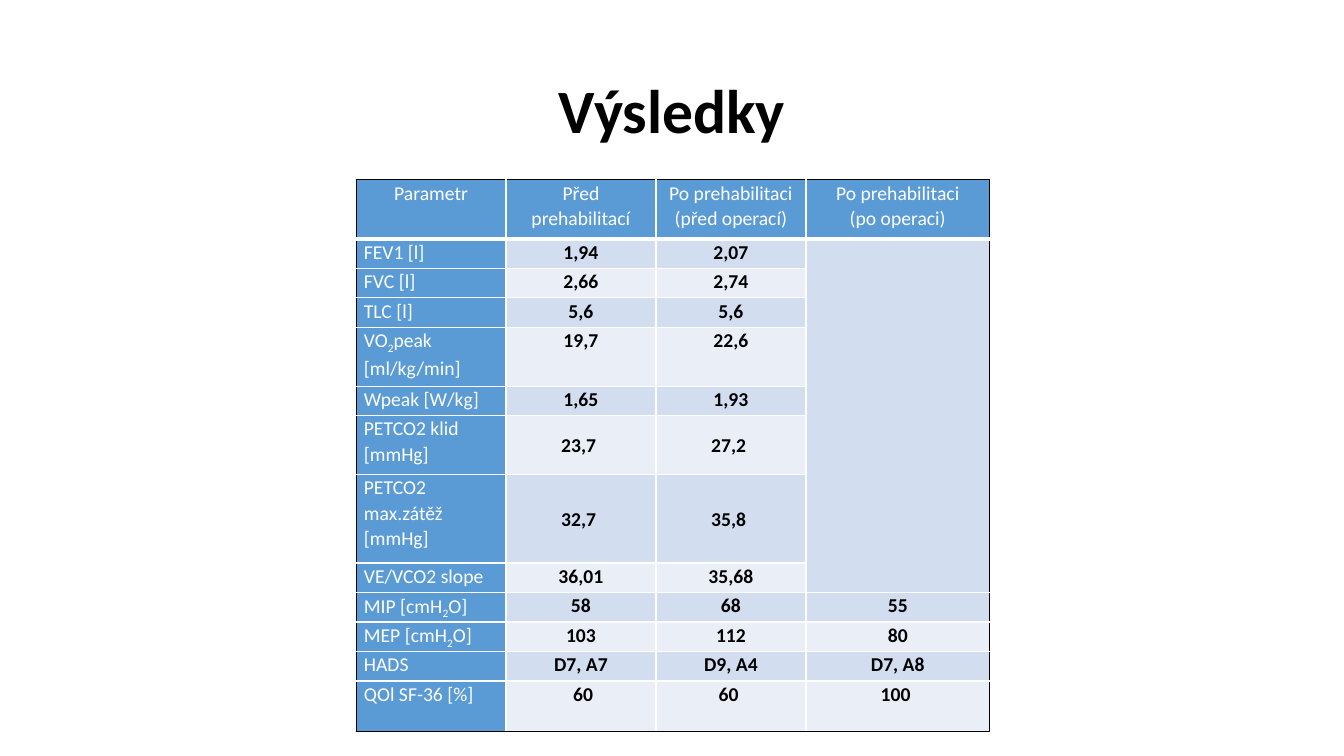
import pptx
import pptx.dml.color
import pptx.enum.text
import pptx.oxml.ns
import pptx.util
from lxml import etree

Cm = pptx.util.Cm
Pt = pptx.util.Pt
RGBColor = pptx.dml.color.RGBColor
PP_ALIGN = pptx.enum.text.PP_ALIGN
MSO_ANCHOR = pptx.enum.text.MSO_ANCHOR
qn = pptx.oxml.ns.qn

BLACK = RGBColor(0x00, 0x00, 0x00)
WHITE = RGBColor(0xFF, 0xFF, 0xFF)
BLUE = RGBColor(0x5B, 0x9B, 0xD5)
BAND_DARK = RGBColor(0xD2, 0xDE, 0xEF)
BAND_LIGHT = RGBColor(0xEA, 0xEF, 0xF7)
FONT = "Calibri"

HEADERS = ["Parametr", "Před prehabilitací",
           "Po prehabilitaci\n(před operací)", "Po prehabilitaci\n(po operaci)"]
# Label pieces (every second one is a subscript), lines of height, values
RESULTS = [
    (["FEV1 [l]"], 1, ["1,94", "2,07"]),
    (["FVC [l]"], 1, ["2,66", "2,74"]),
    (["TLC [l]"], 1, ["5,6", "5,6"]),
    (["VO", "2", "peak [ml/kg/min]"], 2, ["19,7", "22,6"]),
    (["Wpeak [W/kg]"], 1, ["1,65", "1,93"]),
    (["PETCO2 klid [mmHg]"], 2, ["23,7 ", "27,2 "]),
    (["PETCO2 max.zátěž [mmHg]"], 3, ["32,7 ", "35,8 "]),
    (["VE/VCO2 slope"], 1, ["36,01", "35,68"]),
    (["MIP [cmH", "2", "O]"], 1, ["58", "68", "55"]),
    (["MEP [cmH", "2", "O]"], 1, ["103", "112", "80"]),
    (["HADS"], 1, ["D7, A7", "D9, A4", "D7, A8"]),
    (["QOl SF-36 [%]"], 1.7, [" 60", "60 ", "100 "]),
]
COLUMN_WIDTHS = [3.77, 3.78, 3.78, 4.63]
LINE_HEIGHT = 0.743
HEADER_LINES = 2
MERGED_ROWS = 8


def add_run(paragraph, text, size, color, bold, subscript=False):
    run = paragraph.add_run()
    run.text = text
    run.font.name = FONT
    run.font.size = Pt(size)
    run.font.bold = bold
    run.font.color.rgb = color
    if subscript:
        run.font._element.set("baseline", "-25000")


def add_title(slide, left, top, width, height):
    title = slide.shapes.title
    title.left, title.top, title.width, title.height = left, top, width, height
    title.text_frame.vertical_anchor = MSO_ANCHOR.MIDDLE
    paragraph = title.text_frame.paragraphs[0]
    paragraph.alignment = PP_ALIGN.CENTER
    paragraph.line_spacing = 0.9
    add_run(paragraph, "Výsledky", 44, BLACK, True)


def set_borders(cell, borders):
    """Draw (side, color, points) borders, given in the order L, R, T, B."""
    properties = cell._tc.get_or_add_tcPr()
    for index, (side, color, points) in enumerate(borders):
        line = etree.Element(qn(f"a:ln{side}"), w=str(Pt(points)))
        fill = etree.SubElement(line, qn("a:solidFill"))
        etree.SubElement(fill, qn("a:srgbClr"), val=str(color))
        properties.insert(index, line)


def format_cell(cell, row, column, last_row, last_column):
    cell.margin_left = cell.margin_right = Cm(0.19)
    cell.margin_top = cell.margin_bottom = 0
    cell.fill.solid()
    if row == 0 or column == 0:
        cell.fill.fore_color.rgb = BLUE
    else:
        cell.fill.fore_color.rgb = BAND_DARK if row % 2 else BAND_LIGHT
    # Black outline around the table, white lines inside
    set_borders(cell, [
        ("L", BLACK if column == 0 else WHITE, 1),
        ("R", BLACK if column == last_column else WHITE, 1),
        ("T", BLACK if row == 0 else WHITE, 1),
        ("B", BLACK if row == last_row else WHITE, 3 if row == 0 else 1),
    ])


def write_cell(cell, lines, color, bold, alignment):
    """Write one paragraph for each line, a line being a list of pieces."""
    for number, pieces in enumerate(lines):
        frame = cell.text_frame
        paragraph = frame.add_paragraph() if number else frame.paragraphs[0]
        paragraph.alignment = alignment
        paragraph.line_spacing = 1.07
        for index, piece in enumerate(pieces):
            add_run(paragraph, piece, 14, color, bold, index % 2 == 1)


def add_results_table(slide, left, top):
    line_counts = [HEADER_LINES] + [lines for _, lines, _ in RESULTS]
    frame = slide.shapes.add_table(
        len(line_counts), len(HEADERS), left, top,
        Cm(sum(COLUMN_WIDTHS)), Cm(LINE_HEIGHT * sum(line_counts)))
    table = frame.table
    for column, width in zip(table.columns, COLUMN_WIDTHS):
        column.width = Cm(width)
    for row, lines in zip(table.rows, line_counts):
        row.height = Cm(LINE_HEIGHT * lines)

    # Fills and borders
    for row in range(len(line_counts)):
        for column in range(len(HEADERS)):
            format_cell(table.cell(row, column), row, column,
                        len(RESULTS), len(HEADERS) - 1)

    # Header row
    for column, header in enumerate(HEADERS):
        lines = [[line] for line in header.split("\n")]
        write_cell(table.cell(0, column), lines, WHITE, False, PP_ALIGN.CENTER)

    # Measured parameters
    for row, (label, _, values) in enumerate(RESULTS, start=1):
        write_cell(table.cell(row, 0), [label], WHITE, False, PP_ALIGN.LEFT)
        for column, value in enumerate(values, start=1):
            cell = table.cell(row, column)
            write_cell(cell, [[value]], BLACK, True, PP_ALIGN.CENTER)
            if label[0].startswith("PETCO2"):
                cell.vertical_anchor = MSO_ANCHOR.MIDDLE

    # Parameters not measured after the operation
    table.cell(1, 3).merge(table.cell(MERGED_ROWS, 3))


def main():
    presentation = pptx.Presentation()
    presentation.slide_width = Cm(33.87)
    presentation.slide_height = Cm(19.05)
    slide = presentation.slides.add_slide(presentation.slide_layouts[5])
    add_title(slide, Cm(2.33), Cm(1.01), Cm(29.21), Cm(3.68))
    add_results_table(slide, Cm(8.98), Cm(4.53))
    presentation.save("out.pptx")


if __name__ == "__main__":
    main()
